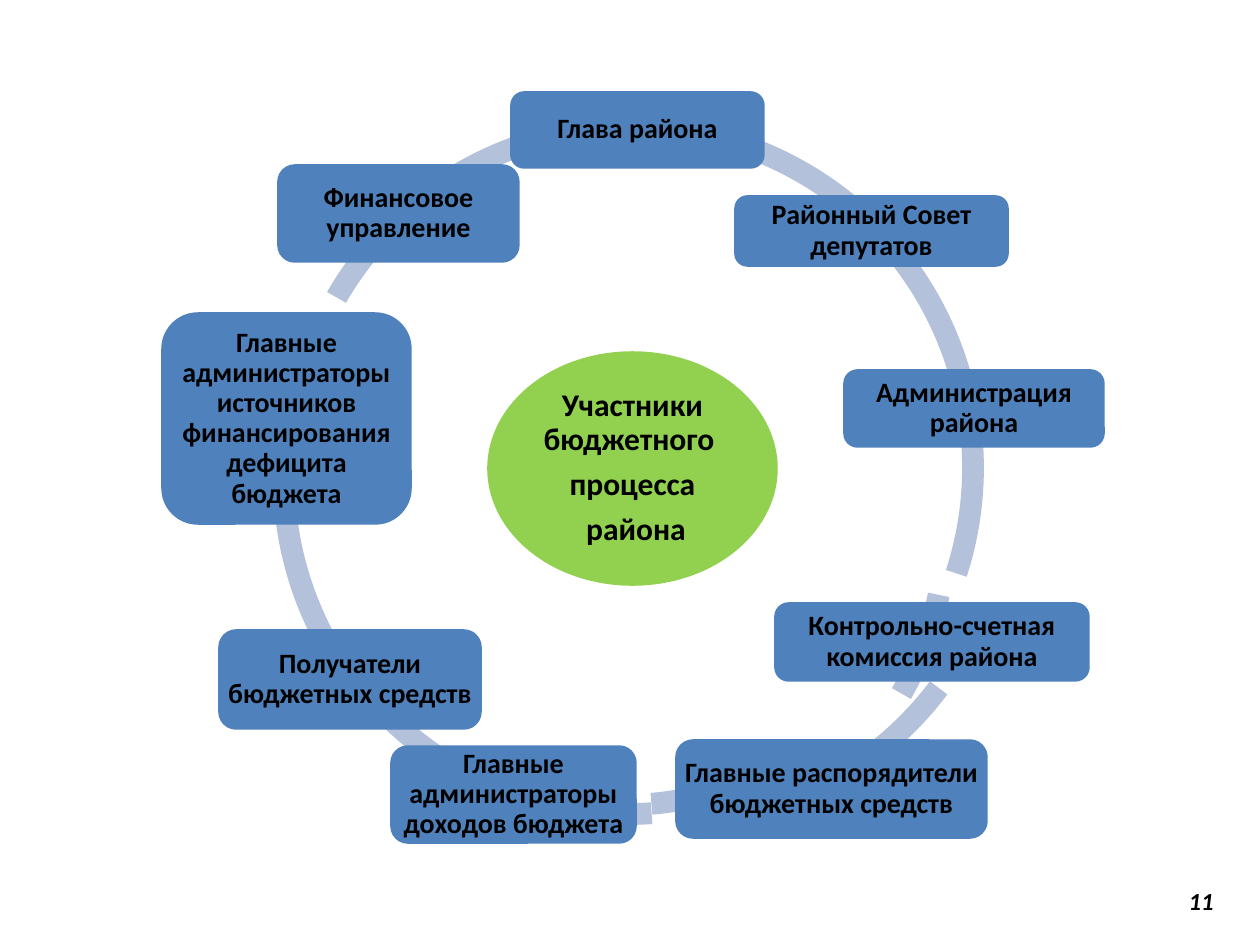
from pptx import Presentation
from pptx.dml.color import RGBColor
from pptx.enum.shapes import MSO_SHAPE
from pptx.enum.text import MSO_ANCHOR, PP_ALIGN
from pptx.util import Emu, Pt

EMU_PER_PX = 914400 / 126
BLOCK_ARC, OVAL, ROUNDED = MSO_SHAPE.BLOCK_ARC, MSO_SHAPE.OVAL, MSO_SHAPE.ROUNDED_RECTANGLE
MIDDLE = MSO_ANCHOR.MIDDLE
CENTER, RIGHT = PP_ALIGN.CENTER, PP_ALIGN.RIGHT

FONT = "Calibri"
BLACK, BLUE, GREEN, RING = "000000", "4F81BD", "92D050", "B3C1DB"
RING_SIZE = 704
RING_THICKNESS = 0.031

# left, top, start angle, end angle (degrees)
ARCS = [
    (273, 125, 137.6, 163.2),
    (276, 122, 113.54, 137.21),
    (276, 121, 86.02, 113.41),
    (270, 112, 64.96, 85.04),
    (314, 131, 36.93, 69.71),
    (253, 173, 11.84, 29.63),
    (280, 116, 210, 18),
    (284, 134, 187.65, 208.24),
    (273, 125, 163.1, 188.96),
]

# left, top, width, height, participant
PARTICIPANTS = [
    (512, 93, 251, 74, "Глава района"),
    (736, 197, 271, 68, "Районный Совет депутатов"),
    (845, 371, 258, 75, "Администрация района"),
    (776, 604, 312, 76, "Контрольно-счетная комиссия района"),
    (677, 741, 309, 96, "Главные распорядители бюджетных средств"),
    (392, 747, 243, 95, "Главные администраторы доходов бюджета"),
    (220, 631, 260, 97, "Получатели бюджетных средств"),
    (163, 314, 247, 209,
     "Главные администраторы источников финансирования дефицита бюджета"),
    (279, 166, 239, 95, "Финансовое управление"),
]


def px(value):
    return Emu(round(value * EMU_PER_PX))


def color(value):
    return RGBColor.from_string(value)


def add_filled_shape(slide, kind, left, top, width, height, fill):
    shape = slide.shapes.add_shape(kind, px(left), px(top), px(width), px(height))
    shape.shadow.inherit = False
    shape.fill.solid()
    shape.fill.fore_color.rgb = color(fill)
    shape.line.fill.background()
    return shape


def add_arc(slide, left, top, start, end):
    arc = add_filled_shape(slide, BLOCK_ARC, left, top, RING_SIZE, RING_SIZE, RING)
    # Angles are stored in 1/60000 degree, adjustments are scaled by 100000.
    arc.adjustments[0] = start * 0.6
    arc.adjustments[1] = end * 0.6
    arc.adjustments[2] = RING_THICKNESS


def write_text(frame, lines, size, alignment, italic=False):
    frame.word_wrap = True
    frame.vertical_anchor = MIDDLE
    for index, line in enumerate(lines):
        paragraph = frame.add_paragraph() if index else frame.paragraphs[0]
        paragraph.alignment = alignment
        if index:
            paragraph.space_before = Pt(size * 0.35)
        run = paragraph.add_run()
        run.text = line
        run.font.name = FONT
        run.font.size = Pt(size)
        run.font.bold = True
        run.font.italic = italic
        run.font.color.rgb = color(BLACK)


def add_node(slide, kind, left, top, width, height, fill, lines, size, inset):
    node = add_filled_shape(slide, kind, left, top, width, height, fill)
    node.line.color.rgb = color(fill)
    node.line.width = Pt(2)
    frame = node.text_frame
    frame.margin_left = frame.margin_right = px(inset)
    frame.margin_top = frame.margin_bottom = px(inset)
    write_text(frame, lines, size, CENTER)
    for paragraph in frame.paragraphs:
        paragraph.line_spacing = 0.9


def add_page_number(slide, number):
    box = slide.shapes.add_textbox(px(903), px(876), px(323), px(50))
    write_text(box.text_frame, [number], 14, RIGHT, italic=True)


def main():
    presentation = Presentation()
    presentation.slide_width, presentation.slide_height = px(1260), px(945)
    slide = presentation.slides.add_slide(presentation.slide_layouts[6])

    add_page_number(slide, "11")
    for arc in ARCS:
        add_arc(slide, *arc)
    add_node(slide, OVAL, 489, 353, 287, 231, GREEN,
             ["Участники бюджетного ", "процесса", " района"], 18, 4)
    for left, top, width, height, name in PARTICIPANTS:
        add_node(slide, ROUNDED, left, top, width, height, BLUE, [name], 16, 2)

    presentation.save("out.pptx")


if __name__ == "__main__":
    main()
